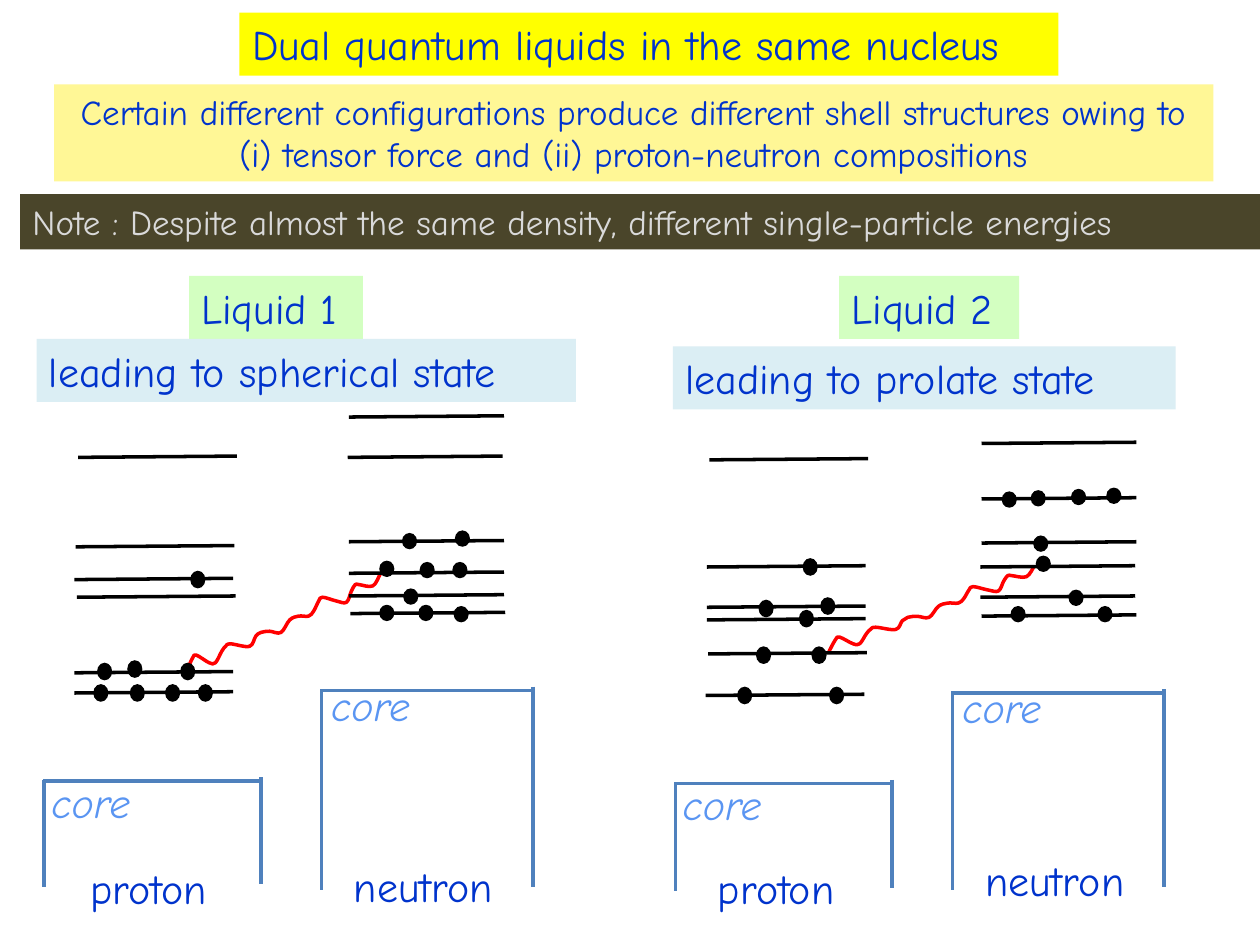
"""Build a slide that sets two nuclear liquids and their shell levels side by side."""
from dataclasses import dataclass
from typing import NamedTuple

from lxml.etree import SubElement
from pptx import Presentation
from pptx.dml.color import RGBColor
from pptx.enum.shapes import MSO_CONNECTOR as Link, MSO_SHAPE as Form
from pptx.enum.text import MSO_ANCHOR as Anchor, MSO_AUTO_SIZE as Fit, PP_ALIGN as Align
from pptx.oxml.ns import qn
from pptx.util import Cm, Pt

INCH = 2.54
BLUE, PALE, EDGE = "0033CC", "5A95F2", "4F81BD"
BLACK, RED = "000000", "FF0000"
BEND = [
    (1.48, 5.33), (1.53, 5.22), (1.56, 5.2), (1.66, 5.26), (1.71, 5.26), (1.76, 5.17),
    (1.79, 5.13), (1.83, 5.11), (1.98, 5.13), (2.03, 5.05), (2.07, 5.02), (2.14, 5.01),
    (2.23, 5.02), (2.3, 4.92), (2.37, 4.89), (2.45, 4.89), (2.49, 4.85), (2.53, 4.77),
    (2.56, 4.74), (2.67, 4.77), (2.75, 4.78), (2.79, 4.69), (2.82, 4.64), (2.85, 4.64),
    (2.96, 4.65), (3.02, 4.55),
]


class Spot(NamedTuple):
    x: float
    y: float


class Box(NamedTuple):
    x: float
    y: float
    w: float
    h: float


@dataclass
class Label:
    text: str
    box: Box
    fill: str = ""
    hue: str = BLUE
    size: int = 24
    slant: bool = False
    align: Align = Align.LEFT


@dataclass
class Well:
    name: Label
    core: Label
    frame: Box
    span: float
    tall: float
    rows: list[tuple[float, float]]
    dots: list[tuple[float, float]]


def cm(val: float) -> Cm:
    return Cm(val * INCH)


def paint(fill, hue: str) -> None:
    fill.solid()
    fill.fore_color.rgb = RGBColor.from_string(hue)


def write(shape, label: Label) -> None:
    if label.fill:
        paint(shape.fill, label.fill)
    frame = shape.text_frame
    frame.text = label.text
    looks = {"word_wrap": True, "auto_size": Fit.NONE, "vertical_anchor": Anchor.TOP}
    for key, val in looks.items():
        setattr(frame, key, val)
    para = frame.paragraphs[0]
    para.alignment = label.align
    font = para.runs[0].font
    looks = {"name": "Comic Neue", "size": Pt(label.size), "italic": label.slant}
    for key, val in looks.items():
        setattr(font, key, val)
    paint(font.fill, label.hue)


def place(slide, label: Label) -> None:
    write(slide.shapes.add_textbox(*map(cm, label.box)), label)


def stroke(slide, start: Spot, end: Spot, hue: str) -> None:
    line = slide.shapes.add_connector(Link.STRAIGHT, *map(cm, (*start, *end)))
    SubElement(line._element.spPr, qn("a:effectLst"))
    paint(line.line.fill, hue)
    line.line.width = Pt(2)


def dot(slide, box: Box) -> None:
    ball = slide.shapes.add_shape(Form.OVAL, *map(cm, box))
    ball.shadow.inherit = False
    paint(ball.fill, BLACK)
    ball.line.fill.background()


def curve(shape) -> None:
    track = next(shape._element.iter(qn("a:path")))
    knots = [(int(pt.get("x")), int(pt.get("y"))) for pt in track.iter(qn("a:pt"))]
    for step in track.findall(qn("a:lnTo")):
        track.remove(step)
    ends = [knots[0], *knots, knots[-1]]
    for a, b, c, d in zip(ends, ends[1:], ends[2:], ends[3:]):
        first = [q + (r - p) // 6 for p, q, r in zip(a, b, c)]
        second = [q - (r - p) // 6 for p, q, r in zip(b, c, d)]
        bow = SubElement(track, qn("a:cubicBezTo"))
        for x, y in (first, second, c):
            SubElement(bow, qn("a:pt"), x=str(x), y=str(y))


def wave(slide, start: Spot, end: Spot) -> None:
    (x0, y0), (x1, y1) = BEND[0], BEND[-1]
    knots = [(cm(start.x + (x - x0) / (x1 - x0) * (end.x - start.x)),
              cm(start.y + (y - y0) / (y1 - y0) * (end.y - start.y))) for x, y in BEND]
    pen = slide.shapes.build_freeform(*knots[0])
    pen.add_line_segments(knots[1:], close=False)
    shape = pen.convert_to_shape()
    curve(shape)
    shape.shadow.inherit = False
    shape.fill.background()
    paint(shape.line.fill, RED)
    shape.line.width = Pt(2)


def draw(slide, well: Well) -> None:
    for x, y in well.rows:
        stroke(slide, Spot(x, y), Spot(x + well.span, y - 0.01), BLACK)
    for x, y in well.dots:
        dot(slide, Box(x, y, 0.12, well.tall))
    x, y, w, h = well.frame
    right, low = x + w, y + h
    stroke(slide, Spot(x, y), Spot(right, y), EDGE)
    stroke(slide, Spot(x + 0.01, y - 0.01), Spot(x + 0.01, low), EDGE)
    stroke(slide, Spot(right - 0.01, y - 0.03), Spot(right - 0.01, low - 0.02), EDGE)
    place(slide, well.core)
    place(slide, well.name)


def proton(x: float, y: float, frame: Box, rows: list, dots: list) -> Well:
    core = Label("core", Box(frame.x - 0.03, frame.y - 0.09, 1.01, 0.5), hue=PALE, slant=True)
    return Well(Label("proton", Box(x, y, 1.23, 0.5)), core, frame, 1.26, 0.14, rows, dots)


def neutron(x: float, y: float, frame: Box, rows: list, dots: list) -> Well:
    core = Label("core", Box(frame.x - 0.01, frame.y - 0.14, 1.01, 0.5), hue=PALE, slant=True)
    return Well(Label("neutron", Box(x, y, 1.41, 0.5)), core, frame, 1.23, 0.13, rows, dots)


TITLE = Label("Dual quantum liquids in the same nucleus", Box(1.9, 0.1, 6.5, 0.5), "FFFF00")
LABELS = [
    Label("Certain different configurations produce different shell structures owing to "
          "(i) tensor force and (ii) proton-neutron compositions",
          Box(0.43, 0.67, 9.2, 0.77), "FFF796", size=20, align=Align.CENTER),
    Label("Note : Despite almost the same density, different single-particle energies",
          Box(0.16, 1.54, 9.84, 0.44), "4A452A", "D9D9D9", 20),
    Label("Liquid 1", Box(1.5, 2.19, 1.38, 0.5), "D3FFC1"),
    Label("Liquid 2", Box(6.66, 2.19, 1.43, 0.5), "D3FFC1"),
    Label("leading to spherical state", Box(0.29, 2.69, 4.28, 0.5), "DBEEF4"),
    Label("leading to prolate state", Box(5.34, 2.75, 3.99, 0.5), "DBEEF4"),
]
WAVES = [(Spot(1.48, 5.33), Spot(3.02, 4.55)), (Spot(6.58, 5.17), Spot(8.21, 4.49))]
WELLS = [
    proton(0.62, 6.8, Box(0.34, 6.2, 1.74, 0.84),
           [(0.62, 3.63), (0.6, 4.34), (0.59, 4.6), (0.61, 4.74), (0.59, 5.34), (0.59, 5.5)],
           [(1.51, 4.53), (0.77, 5.26), (1.01, 5.24), (1.43, 5.26),
            (0.74, 5.43), (1.03, 5.43), (1.31, 5.43), (1.57, 5.43)]),
    neutron(2.71, 6.78, Box(2.54, 5.48, 1.7, 1.58),
            [(2.77, 3.31), (2.76, 3.63), (2.77, 4.3), (2.77, 4.55), (2.77, 4.73), (2.78, 4.87)],
            [(3.19, 4.23), (3.61, 4.21), (3.01, 4.45), (3.33, 4.46), (3.59, 4.46),
             (3.2, 4.67), (3.01, 4.8), (3.32, 4.8), (3.6, 4.81)]),
    proton(5.6, 6.8, Box(5.35, 6.22, 1.74, 0.85),
           [(5.63, 3.65), (5.61, 4.5), (5.61, 4.82), (5.61, 4.92), (5.62, 5.19), (5.6, 5.52)],
           [(6.37, 4.43), (6.02, 4.76), (6.51, 4.74), (6.34, 4.84),
            (6, 5.13), (6.44, 5.13), (5.85, 5.45), (6.58, 5.45)]),
    neutron(7.72, 6.73, Box(7.55, 5.5, 1.7, 1.56),
            [(7.79, 3.52), (7.79, 3.96), (7.79, 4.31), (7.78, 4.5), (7.78, 4.74), (7.79, 4.89)],
            [(7.95, 3.9), (8.18, 3.89), (8.5, 3.88), (8.78, 3.87), (8.2, 4.25),
             (8.22, 4.41), (8.48, 4.68), (8.02, 4.81), (8.71, 4.81)]),
]


def main() -> None:
    deck = Presentation()
    deck.slide_width, deck.slide_height = Cm(25.4), Cm(19.05)
    slide = deck.slides.add_slide(deck.slide_layouts[5])
    title = slide.shapes.title
    for key, val in zip(("left", "top", "width", "height"), TITLE.box):
        setattr(title, key, cm(val))
    write(title, TITLE)
    for start, end in WAVES:
        wave(slide, start, end)
    for well in WELLS:
        draw(slide, well)
    for label in LABELS:
        place(slide, label)
    deck.save("out.pptx")


if __name__ == "__main__":
    main()
